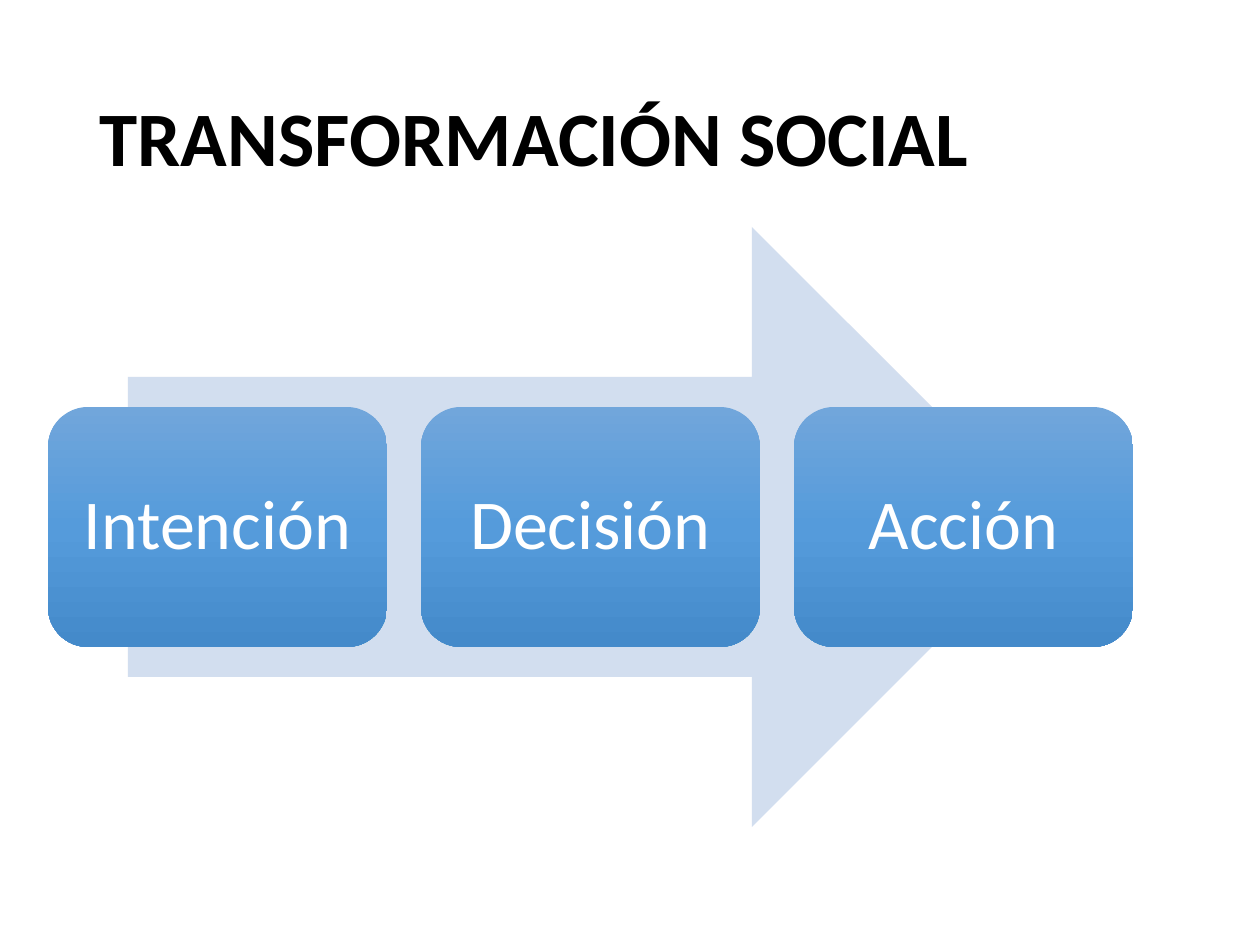
from dataclasses import dataclass

from lxml.etree import SubElement
from pptx import Presentation
from pptx.dml.color import RGBColor
from pptx.enum.shapes import MSO_SHAPE
from pptx.enum.text import MSO_ANCHOR, PP_ALIGN
from pptx.oxml.ns import qn
from pptx.shapes.autoshape import Shape
from pptx.slide import Slide
from pptx.text.text import TextFrame
from pptx.util import Pt

EMU_PER_PX = 914400 / 126


@dataclass(frozen=True)
class Theme:
    font: str = "Calibri"
    title_size: int = 44
    step_size: int = 40
    title_color: str = "000000"
    step_color: str = "FFFFFF"
    arrow_fill: str = "D2DEEF"
    step_gradient: tuple[tuple[int, str], ...] = (
        (0, "71A6DB"), (50, "559BDB"), (100, "448ACA"))


@dataclass(frozen=True)
class Box:
    left: int
    top: int
    width: int
    height: int

    def emu(self) -> tuple[int, ...]:
        return tuple(px(n) for n in (self.left, self.top, self.width, self.height))


THEME = Theme()
TITLE = Box(87, 50, 1086, 183)
ARROW = Box(128, 227, 924, 600)
FIRST_STEP = Box(48, 407, 339, 240)
STEP_GAP = 34
STEP_INSET = 16
STEPS = ("Intención", "Decisión", "Acción")


def px(length: int) -> int:
    return round(length * EMU_PER_PX)


def write_text(frame: TextFrame, text: str, *, size: int, color: str,
               bold: bool = False, align: PP_ALIGN = PP_ALIGN.LEFT) -> None:
    frame.word_wrap = True
    frame.vertical_anchor = MSO_ANCHOR.MIDDLE
    paragraph = frame.paragraphs[0]
    paragraph.alignment = align
    paragraph.line_spacing = 0.9
    run = paragraph.add_run()
    run.text = text
    run.font.name = THEME.font
    run.font.size = Pt(size)
    run.font.bold = bold
    run.font.color.rgb = RGBColor.from_string(color)


def add_plain_shape(slide: Slide, kind: MSO_SHAPE, box: Box) -> Shape:
    shape = slide.shapes.add_shape(kind, *box.emu())
    shape.shadow.inherit = False
    shape.line.fill.background()
    return shape


def fill_downward(shape: Shape, stops: tuple[tuple[int, str], ...]) -> None:
    """Fill with a top-to-bottom gradient of any number of stops."""
    shape.fill.gradient()
    shape.fill.gradient_angle = 270
    stop_list = shape._element.spPr.find(f".//{qn('a:gsLst')}")
    for old_stop in list(stop_list):
        stop_list.remove(old_stop)
    for percent, color in stops:
        stop = SubElement(stop_list, qn("a:gs"), pos=str(percent * 1000))
        SubElement(stop, qn("a:srgbClr"), val=color)


def add_step(slide: Slide, text: str, box: Box) -> None:
    step = add_plain_shape(slide, MSO_SHAPE.ROUNDED_RECTANGLE, box)
    fill_downward(step, THEME.step_gradient)
    frame = step.text_frame
    frame.margin_left = frame.margin_right = px(STEP_INSET)
    frame.margin_top = frame.margin_bottom = px(STEP_INSET)
    write_text(frame, text, size=THEME.step_size, color=THEME.step_color,
               align=PP_ALIGN.CENTER)


def main() -> None:
    presentation = Presentation()
    presentation.slide_width = px(1260)
    presentation.slide_height = px(945)
    slide = presentation.slides.add_slide(presentation.slide_layouts[5])

    title = slide.shapes.title
    title.left, title.top, title.width, title.height = TITLE.emu()
    write_text(title.text_frame, "TRANSFORMACIÓN SOCIAL", size=THEME.title_size,
               color=THEME.title_color, bold=True)

    arrow = add_plain_shape(slide, MSO_SHAPE.RIGHT_ARROW, ARROW)
    arrow.fill.solid()
    arrow.fill.fore_color.rgb = RGBColor.from_string(THEME.arrow_fill)

    for index, text in enumerate(STEPS):
        left = FIRST_STEP.left + index * (FIRST_STEP.width + STEP_GAP)
        add_step(slide, text, Box(left, FIRST_STEP.top, FIRST_STEP.width, FIRST_STEP.height))

    presentation.save("out.pptx")


if __name__ == "__main__":
    main()
